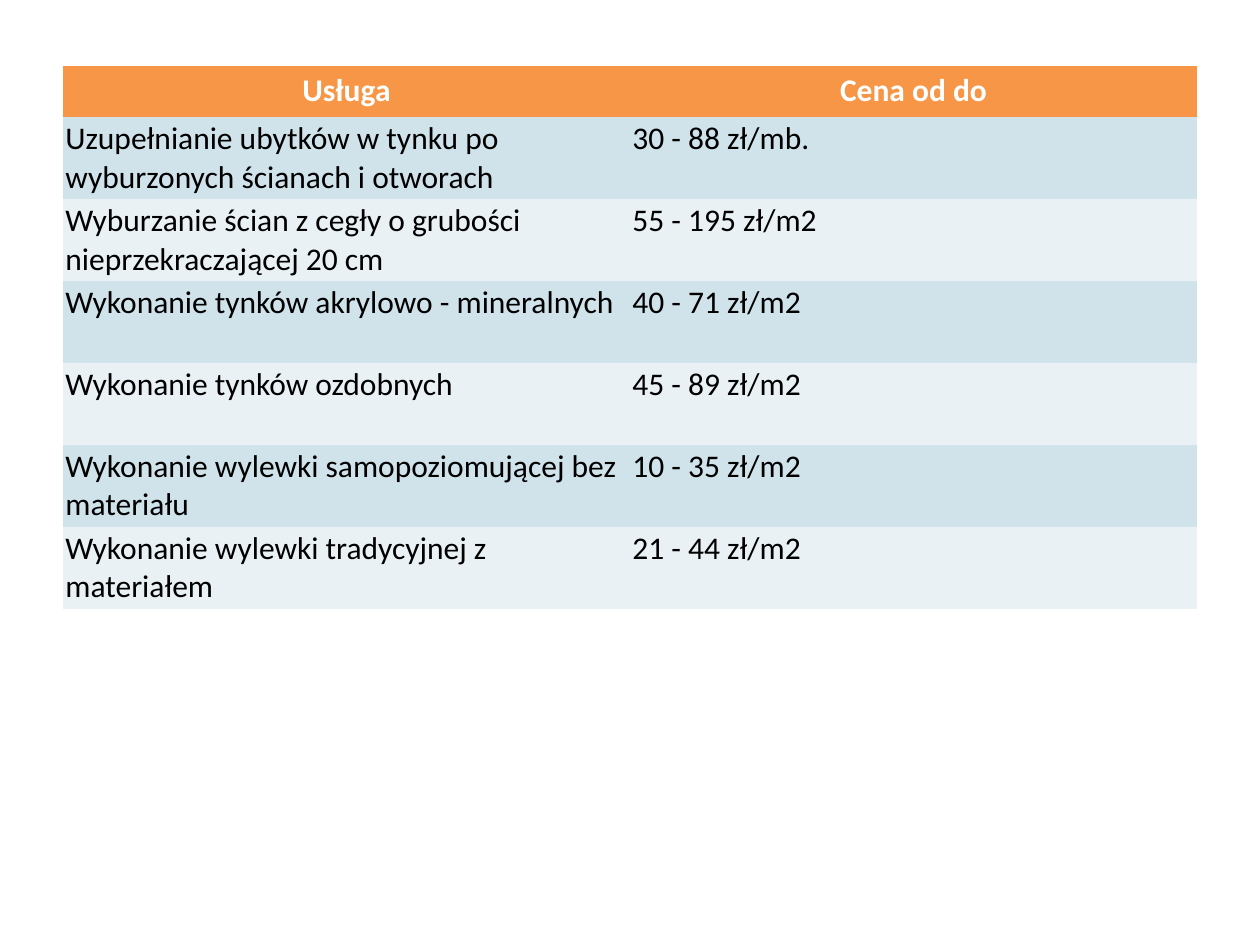
from pptx import Presentation
from pptx import util as u
from pptx.dml.color import RGBColor
from pptx.enum import text

ORANGE = RGBColor(0xF7, 0x96, 0x46)
BLUE = RGBColor(0xD0, 0xE3, 0xEA)
PALE_BLUE = RGBColor(0xE9, 0xF1, 0xF5)
WHITE = RGBColor(0xFF, 0xFF, 0xFF)
BLACK = RGBColor(0, 0, 0)

WIDTH, HEIGHT = u.Inches(10), u.Inches(7.5)
MARGIN = int(WIDTH * 0.05)
TOP = u.Inches(0.52)
HEADER_HEIGHT, SERVICE_HEIGHT = u.Inches(0.41), u.Inches(0.65)
SERVICE_INSET = u.Inches(0.02)

HEADINGS = ("Usługa", "Cena od do")
SERVICES = [
    ("Uzupełnianie ubytków w tynku po wyburzonych ścianach i otworach", "30 - 88 zł/mb."),
    ("Wyburzanie ścian z cegły o grubości nieprzekraczającej 20 cm", "55 - 195 zł/m2"),
    ("Wykonanie tynków akrylowo - mineralnych", "40 - 71 zł/m2"),
    ("Wykonanie tynków ozdobnych", "45 - 89 zł/m2"),
    ("Wykonanie wylewki samopoziomującej bez materiału", "10 - 35 zł/m2"),
    ("Wykonanie wylewki tradycyjnej z materiałem", "21 - 44 zł/m2"),
]


def fill_cell(cell, wording, background, color, bold, alignment):
    cell.fill.solid()
    cell.fill.fore_color.rgb = background
    paragraph = cell.text_frame.paragraphs[0]
    paragraph.text = wording
    paragraph.alignment = alignment
    font = paragraph.runs[0].font
    font.name, font.size, font.bold = "Calibri", u.Pt(18), bold
    font.color.rgb = color


def fill_header(prices):
    prices.rows[0].height = HEADER_HEIGHT
    for column, heading in enumerate(HEADINGS):
        fill_cell(prices.cell(0, column), heading, ORANGE, WHITE, True,
                  text.PP_ALIGN.CENTER)


def fill_service(prices, row, service):
    prices.rows[row].height = SERVICE_HEIGHT
    background = BLUE if row % 2 else PALE_BLUE
    for column, wording in enumerate(service):
        cell = prices.cell(row, column)
        cell.margin_left = cell.margin_right = SERVICE_INSET
        cell.margin_top = cell.margin_bottom = SERVICE_INSET
        fill_cell(cell, wording, background, BLACK, False, text.PP_ALIGN.LEFT)


def add_price_list(slide):
    height = HEADER_HEIGHT + SERVICE_HEIGHT * len(SERVICES)
    prices = slide.shapes.add_table(len(SERVICES) + 1, len(HEADINGS), MARGIN, TOP,
                                    WIDTH - 2 * MARGIN, height).table
    # The plain "No Style, No Grid" style leaves the cells without borders.
    style = prices._tbl.tblPr.find("{*}tableStyleId")
    style.text = "{2D5ABB26-0587-4C30-8999-92F81FD0307C}"
    fill_header(prices)
    for row, service in enumerate(SERVICES, start=1):
        fill_service(prices, row, service)


def main():
    deck = Presentation()
    deck.slide_width, deck.slide_height = WIDTH, HEIGHT
    add_price_list(deck.slides.add_slide(deck.slide_layouts[6]))
    deck.save("out.pptx")


if __name__ == "__main__":
    main()
